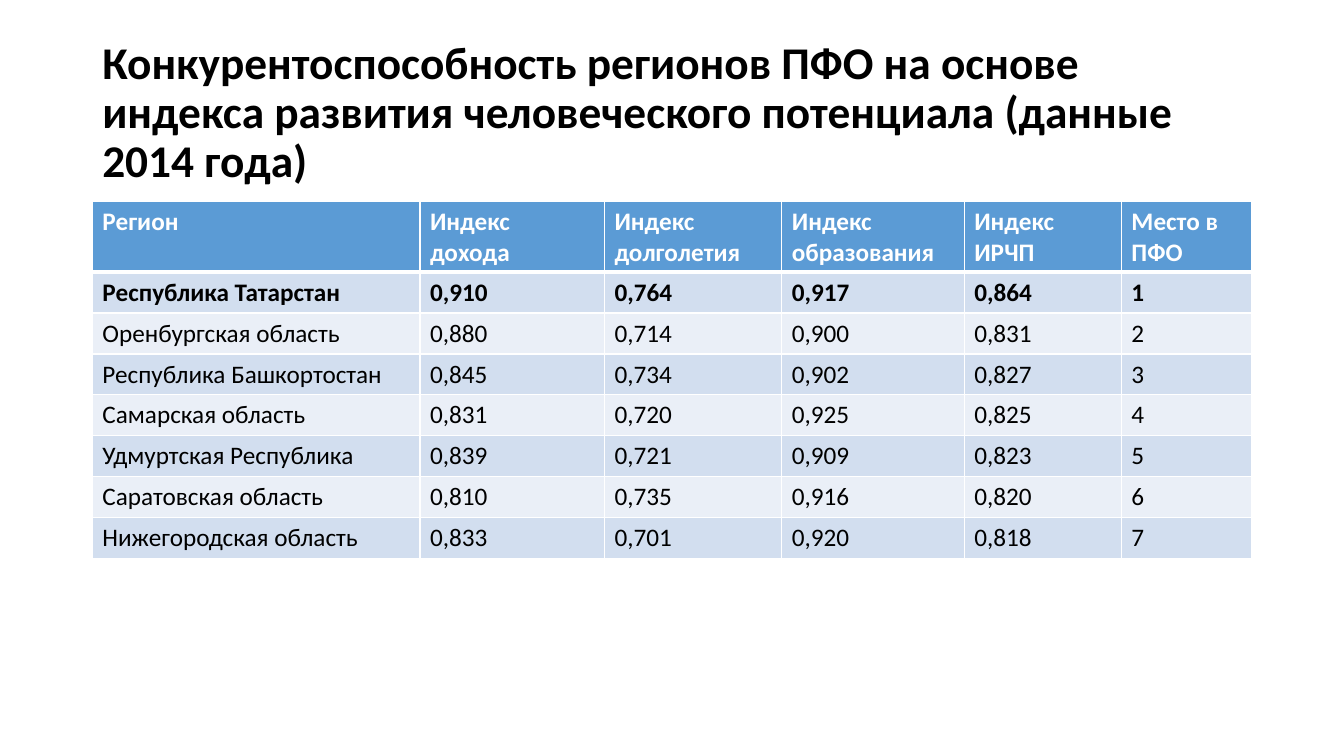
from pptx import Presentation
from pptx.dml.color import RGBColor
from pptx.enum.text import MSO_ANCHOR
from pptx.oxml.ns import qn
from pptx.util import Pt
from lxml.etree import SubElement

WHITE = RGBColor(0xFF, 0xFF, 0xFF)
BLACK = RGBColor(0, 0, 0)
BLUE = RGBColor(0x5B, 0x9B, 0xD5)
BANDS = [RGBColor(0xEA, 0xEF, 0xF7), RGBColor(0xD2, 0xDE, 0xEF)]

TITLE = ("Конкурентоспособность регионов ПФО на основе индекса "
         "развития человеческого потенциала (данные 2014 года)")
HEAD = ["Регион", "Индекс дохода", "Индекс долголетия",
        "Индекс образования", "Индекс ИРЧП", "Место в ПФО"]
DATA = [
    ["Республика Татарстан", "0,910", "0,764", "0,917", "0,864", "1"],
    ["Оренбургская область", "0,880", "0,714", "0,900", "0,831", "2"],
    ["Республика Башкортостан", "0,845", "0,734", "0,902", "0,827", "3"],
    ["Самарская область", "0,831", "0,720", "0,925", "0,825", "4"],
    ["Удмуртская Республика", "0,839", "0,721", "0,909", "0,823", "5"],
    ["Саратовская область", "0,810", "0,735", "0,916", "0,820", "6"],
    ["Нижегородская область", "0,833", "0,701", "0,920", "0,818", "7"],
]
WIDTHS = [234, 131.8, 126.7, 130.3, 112.3, 92.9]
LEFT, ROW = 66, 29.2


def set_text(frame, text, color, **style):
    """Write one run in a frame with the given font values."""
    run = frame.paragraphs[0].add_run()
    run.text = text
    for name, value in {"name": "Calibri", **style}.items():
        setattr(run.font, name, value)
    run.font.color.rgb = color


def add_title(slide):
    """Add the bold heading above the table."""
    box = slide.shapes.add_textbox(Pt(LEFT), Pt(28.8), Pt(sum(WIDTHS)), Pt(104.4))
    frame = box.text_frame
    for name, value in {"word_wrap": True, "vertical_anchor": MSO_ANCHOR.MIDDLE}.items():
        setattr(frame, name, value)
    frame.paragraphs[0].line_spacing = 0.9
    set_text(frame, TITLE, BLACK, size=Pt(32.4), bold=True)


def set_edges(cell, widths):
    """Draw white borders on a cell, one width in points per side."""
    props = cell._tc.get_or_add_tcPr()
    for side, width in widths.items():
        line = SubElement(props, qn(f"a:ln{side}"), w=str(Pt(width)))
        fill = SubElement(line, qn("a:solidFill"))
        SubElement(fill, qn("a:srgbClr"), val=str(WHITE))


def fill_cell(cell, text, row):
    """Give a cell its borders, fill and text by its row number."""
    edges = {"L": 1, "R": 1, "T": 3 if row == 1 else 1, "B": 1 if row else 3}
    set_edges(cell, edges)
    cell.fill.solid()
    cell.fill.fore_color.rgb = BANDS[row % 2] if row else BLUE
    set_text(cell.text_frame, text, BLACK if row else WHITE,
             size=Pt(18), bold=row < 2)


def add_grid(slide):
    """Add the table of regions and their indices."""
    rows = [HEAD] + DATA
    shape = slide.shapes.add_table(len(rows), len(HEAD), Pt(LEFT), Pt(144),
                                   Pt(sum(WIDTHS)), Pt(ROW * len(rows)))
    table = shape.table
    for col, width in zip(table.columns, WIDTHS):
        col.width = Pt(width)
    for i, texts in enumerate(rows):
        table.rows[i].height = Pt(ROW)
        for j, text in enumerate(texts):
            fill_cell(table.cell(i, j), text, i)


def main():
    """Build the slide and save it."""
    deck = Presentation()
    for name, value in {"slide_width": Pt(960), "slide_height": Pt(540)}.items():
        setattr(deck, name, value)
    slide = deck.slides.add_slide(deck.slide_layouts[6])
    add_title(slide)
    add_grid(slide)
    deck.save("out.pptx")


if __name__ == "__main__":
    main()
